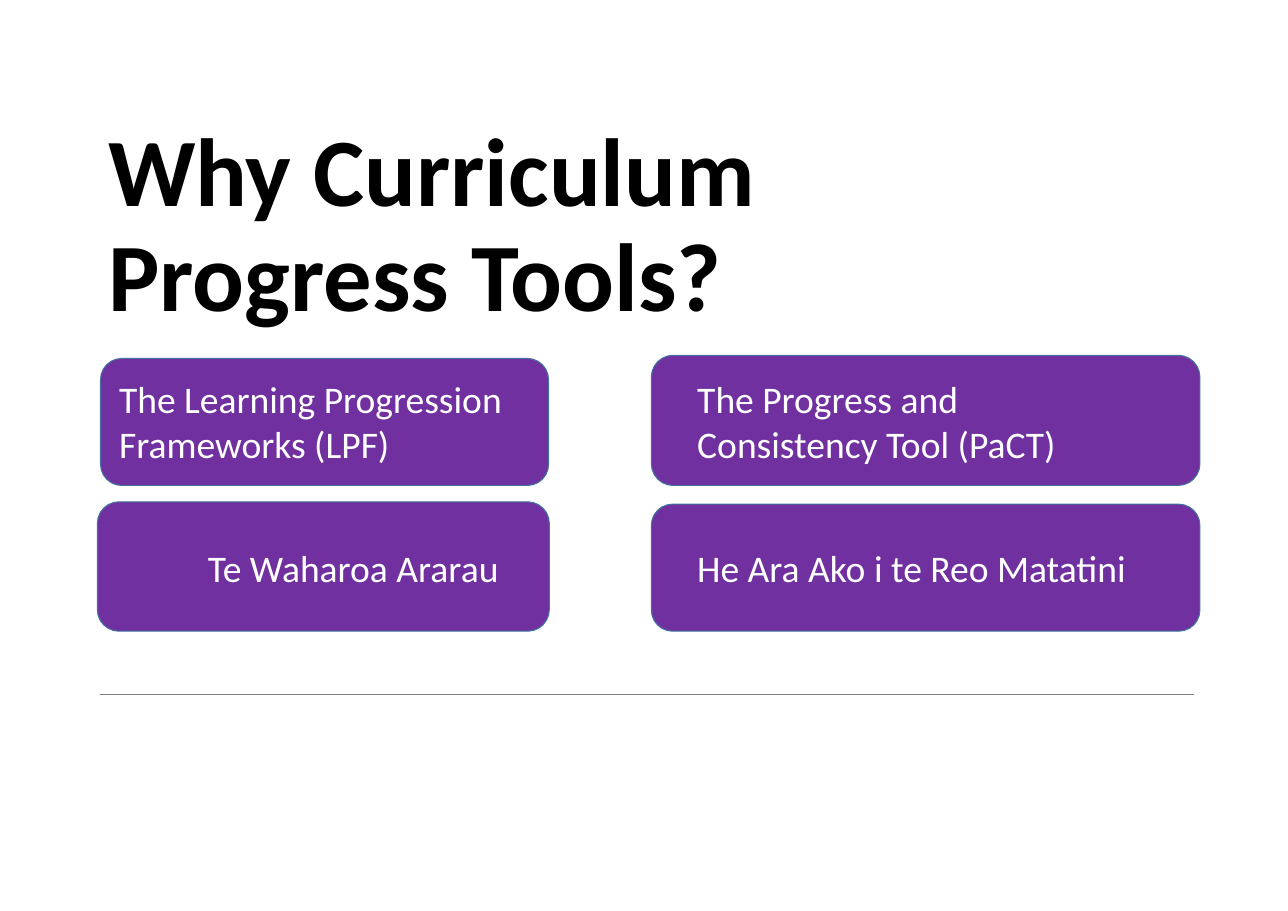
from lxml import etree
from pptx import Presentation
from pptx.dml.color import RGBColor
from pptx.enum.shapes import MSO_CONNECTOR, MSO_SHAPE
from pptx.enum.text import MSO_ANCHOR, MSO_AUTO_SIZE, PP_ALIGN
from pptx.oxml.ns import qn
from pptx.util import Inches, Pt

FONT = "Calibri"
PURPLE, OUTLINE, GREY = "7030A0", "43739E", "808080"
BLACK, WHITE = "000000", "FFFFFF"

TITLE = "Why Curriculum\vProgress Tools?"
TITLE_AREA = (1.29, 1, 12.4, 3.31)

# Each tool: text, panel area, label area (left, top, width, height)
TOOLS = [
    ("The Learning Progression Frameworks (LPF)",
     (1.29, 4.6, 5.75, 1.63), (1.43, 4.78, 6.06, 1.27)),
    ("The Progress and\vConsistency Tool (PaCT)",
     (8.36, 4.56, 7.04, 1.67), (8.85, 4.78, 6.06, 1.27)),
    ("Te Waharoa Ararau",
     (1.25, 6.44, 5.8, 1.66), (2.57, 6.94, 4.15, 0.7)),
    ("He Ara Ako i te Reo Matatini",
     (8.36, 6.47, 7.04, 1.63), (8.85, 6.94, 6.06, 0.7)),
]
RULE_LEFT, RULE_RIGHT, RULE_TOP = 1.29, 15.33, 8.91


def color(value):
    return RGBColor.from_string(value)


def inches(area):
    return [Inches(length) for length in area]


def write(frame, text, size, ink, bold=False):
    frame.word_wrap = True
    frame.text = text
    para = frame.paragraphs[0]
    para.alignment = PP_ALIGN.LEFT
    para.font.name = FONT
    para.font.size = Pt(size)
    para.font.bold = bold
    para.font.color.rgb = color(ink)
    return para


def add_panel(page, area):
    panel = page.shapes.add_shape(MSO_SHAPE.ROUNDED_RECTANGLE, *inches(area))
    panel.shadow.inherit = False
    panel.fill.solid()
    panel.fill.fore_color.rgb = color(PURPLE)
    panel.line.color.rgb = color(OUTLINE)
    panel.line.width = Pt(1)


def add_label(page, text, area):
    box = page.shapes.add_textbox(*inches(area))
    write(box.text_frame, text, 34.7, WHITE)
    box.text_frame.auto_size = MSO_AUTO_SIZE.SHAPE_TO_FIT_TEXT


def main():
    deck = Presentation()
    deck.slide_width, deck.slide_height = Inches(16.53), Inches(11.69)
    page = deck.slides.add_slide(deck.slide_layouts[5])

    # Title
    title = page.shapes.title
    title.left, title.top, title.width, title.height = inches(TITLE_AREA)
    para = write(title.text_frame, TITLE, 89.3, BLACK, bold=True)
    para.line_spacing = 0.9
    title.text_frame.auto_size = MSO_AUTO_SIZE.NONE
    title.text_frame.vertical_anchor = MSO_ANCHOR.BOTTOM

    # Tool panels with their labels
    for text, panel_area, label_area in TOOLS:
        add_panel(page, panel_area)
        add_label(page, text, label_area)

    # Rule below the panels
    rule = page.shapes.add_connector(
        MSO_CONNECTOR.STRAIGHT,
        *inches((RULE_LEFT, RULE_TOP, RULE_RIGHT, RULE_TOP)))
    rule.line.color.rgb = color(GREY)
    rule.line.width = Pt(0.5)
    etree.SubElement(rule._element.spPr, qn("a:effectLst"))

    deck.save("out.pptx")


if __name__ == "__main__":
    main()
